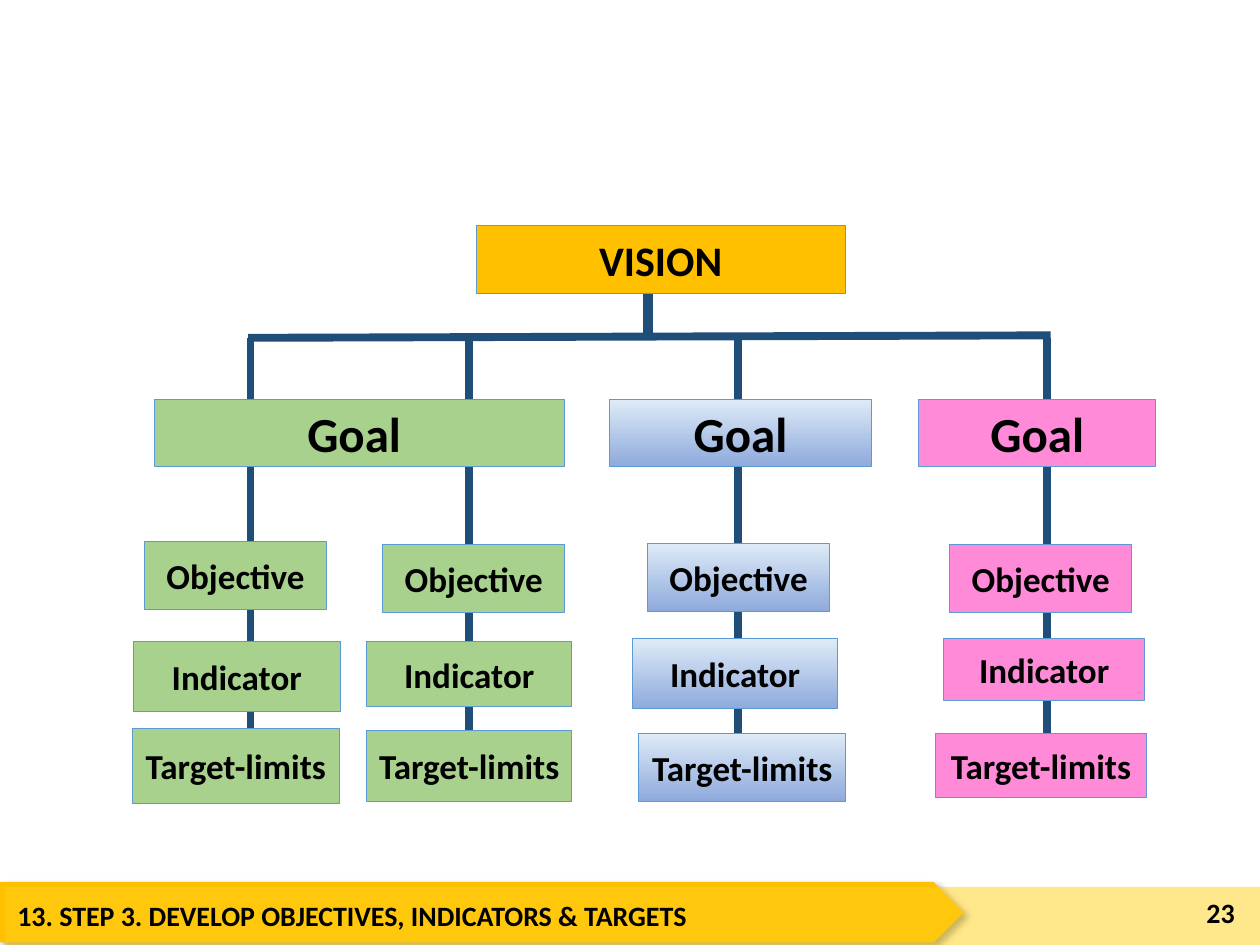
from lxml import etree
from pptx import Presentation
from pptx import util as u
from pptx.dml.color import RGBColor
from pptx.enum import shapes, text
from pptx.oxml import parse_xml
from pptx.oxml.ns import qn

COLORS = {"gold": "FFC000", "pale gold": "FFD01B", "green": "A9D18E",
          "pink": "FF8AD8", "navy": "1F4E79", "outline": "5B9BD5",
          "black": "000000", "blue dark": "8FAADC", "blue light": "DEEBF7"}
DRAWING_NS = "http://schemas.openxmlformats.org/drawingml/2006/main"

# Content: positions are left, top, width, height in cm
FOOTER = "13. STEP 3. DEVELOP OBJECTIVES, INDICATORS & TARGETS"
PAGE_NUMBER = "23"
VISION = ("VISION", "gold", (9.6, 4.55, 7.44, 1.37))
GOALS = [  # text, fill, left, width
    ("Goal ", "green", 3.12, 8.26),
    ("Goal", "blue", 12.29, 5.28),
    ("Goal", "pink", 18.52, 4.78),
]
LEVELS = ["Objective", "Indicator", "Target-limits"]
BRANCHES = [  # fill, line position, one box per level
    ("green", 5.05, [(2.92, 10.92, 3.66, 1.37), (2.69, 12.93, 4.17, 1.42),
                     (2.67, 14.68, 4.17, 1.52)]),
    ("green", 9.45, [(7.72, 10.97, 3.66, 1.37), (7.39, 12.93, 4.14, 1.32),
                     (7.39, 14.73, 4.14, 1.42)]),
    ("blue", 14.88, [(13.06, 10.95, 3.66, 1.37), (12.75, 12.88, 4.14, 1.4),
                     (12.88, 14.78, 4.17, 1.37)]),
    ("pink", 21.11, [(19.15, 10.97, 3.66, 1.37), (19.02, 12.88, 4.06, 1.24),
                     (18.85, 14.78, 4.27, 1.3)]),
]
GOAL_TOP, GOAL_HEIGHT = 8.05, 1.35
BUS_Y, BRANCH_END = 6.81, 15.47

deck = Presentation()
deck.slide_width, deck.slide_height = u.Cm(25.4), u.Cm(19.05)
page = deck.slides.add_slide(deck.slide_layouts[6])


def color(name):
    return RGBColor.from_string(COLORS[name])


def write(box, words, size, align):
    para = box.text_frame.paragraphs[0]
    para.alignment = align
    span = para.add_run()
    span.text = words
    span.font.name = "Calibri"
    span.font.size = u.Pt(size)
    span.font.bold = True
    span.font.color.rgb = color("black")


def add_block(kind, place, fill):
    block = page.shapes.add_shape(kind, *map(u.Cm, place))
    block.shadow.inherit = False
    if fill == "blue":
        block.fill.gradient()
        block.fill.gradient_angle = 90
        for stop, shade in zip(block.fill.gradient_stops, ("blue dark", "blue light")):
            stop.color.rgb = color(shade)
    else:
        block.fill.solid()
        block.fill.fore_color.rgb = color(fill)
    block.line.fill.background()
    return block


def add_node(words, fill, place, size):
    node = add_block(shapes.MSO_SHAPE.RECTANGLE, place, fill)
    node.line.color.rgb = color("outline")
    node.line.width = u.Pt(0.5)
    node.text_frame.word_wrap = False
    node.text_frame.vertical_anchor = text.MSO_ANCHOR.MIDDLE
    write(node, words, size, text.PP_ALIGN.CENTER)


def add_line(start, end, width):
    line = page.shapes.add_connector(shapes.MSO_CONNECTOR.STRAIGHT,
                                     *map(u.Cm, start + end))
    line.line.color.rgb = color("navy")
    line.line.width = u.Pt(width)
    etree.SubElement(line.element.spPr, qn("a:effectLst"))


def add_label(words, place, align, anchor):
    label = page.shapes.add_textbox(*map(u.Cm, place))
    label.text_frame.word_wrap = True
    label.text_frame.vertical_anchor = anchor
    write(label, words, 16, align)


# Footer band: shadowed arrow under a translucent strip
arrow = add_block(shapes.MSO_SHAPE.PENTAGON, (0, 17.78, 19.43, 1.22), "gold")
arrow.element.spPr.find(qn("a:effectLst")).append(parse_xml(
    f'<a:outerShdw xmlns:a="{DRAWING_NS}" blurRad="50800" dist="38100" dir="2700000" '
    'algn="tl" rotWithShape="0"><a:srgbClr val="000000"><a:alpha val="40000"/>'
    '</a:srgbClr></a:outerShdw>'))
strip = add_block(shapes.MSO_SHAPE.RECTANGLE, (0.1, 17.88, 25.3, 1.17), "pale gold")
strip_color = strip.element.spPr.find(qn("a:solidFill"))[0]
etree.SubElement(strip_color, qn("a:alpha")).set("val", "50000")
add_label(FOOTER, (0.1, 17.98, 19.05, 1.04), text.PP_ALIGN.LEFT, text.MSO_ANCHOR.TOP)
add_label(PAGE_NUMBER, (23.29, 17.88, 1.85, 1.02), text.PP_ALIGN.RIGHT,
          text.MSO_ANCHOR.MIDDLE)

# Tree lines, behind the boxes
add_line((13.06, 4.75), (13.06, BUS_Y), 6)
for _, x, _ in BRANCHES:
    add_line((x, BUS_Y), (x, BRANCH_END), 4.5)
add_line((5.0, BUS_Y), (21.18, 6.76), 4.5)

# Tree boxes
add_node(*VISION, 24)
for words, fill, left, width in GOALS:
    add_node(words, fill, (left, GOAL_TOP, width, GOAL_HEIGHT), 28)
for fill, _, places in BRANCHES:
    for words, place in zip(LEVELS, places):
        add_node(words, fill, place, 20)

deck.save("out.pptx")
